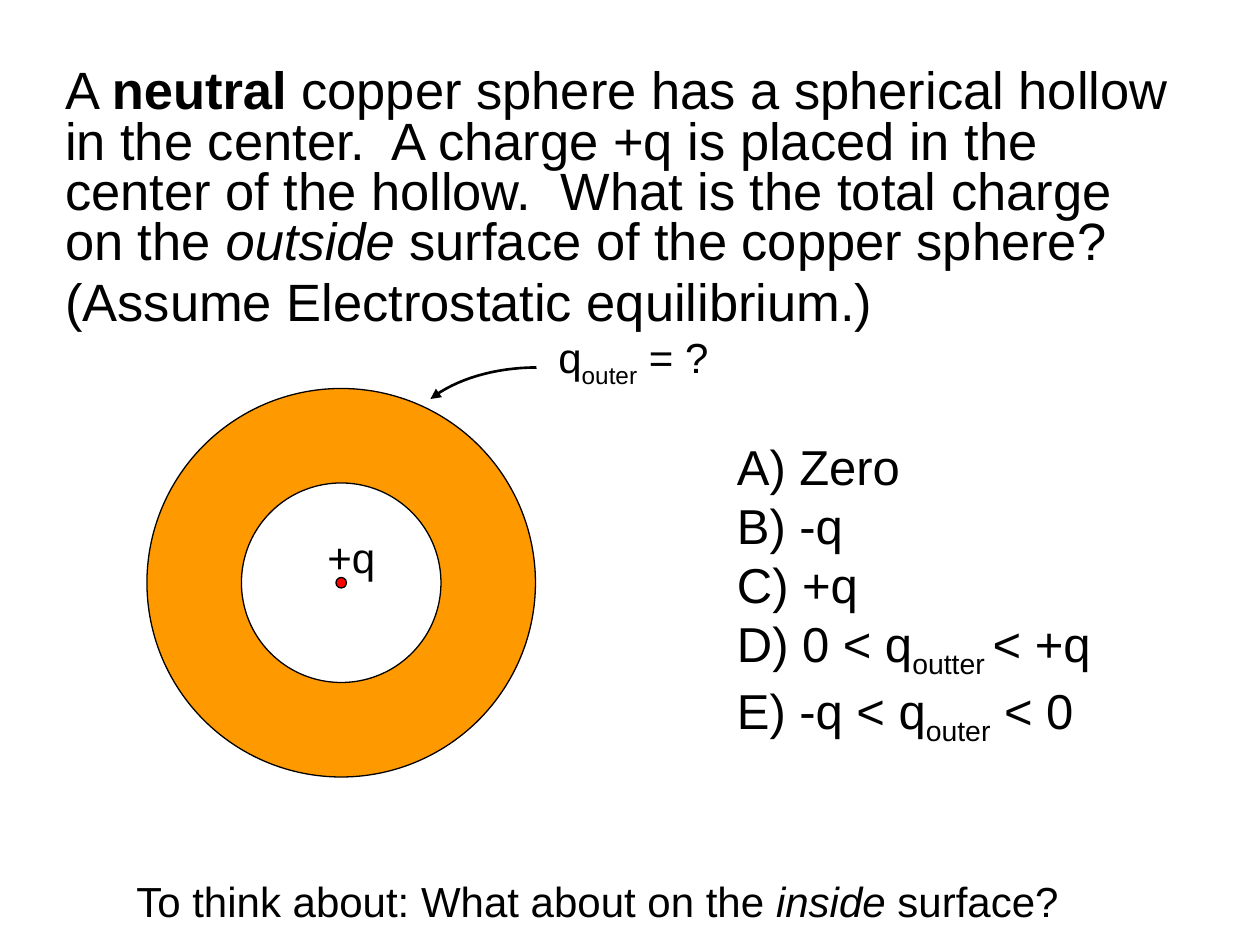
from lxml import etree
from pptx import Presentation
from pptx import util as u
from pptx.dml.color import RGBColor
from pptx.enum import shapes, text
from pptx.oxml.ns import qn

PX = 7620  # EMU per px, at 120 px to the inch
BLACK = "000000"


def color(hex_code):
    return RGBColor.from_string(hex_code)


def write(paragraph, *parts, size=24):
    """Add runs; a part is a string or a (string, style) pair: b, i or sub."""
    for part in parts:
        words, style = (part, "") if isinstance(part, str) else part
        run = paragraph.add_run()
        run.text = words
        run.font.name = "Arial"
        run.font.size = u.Pt(size)
        run.font.color.rgb = color(BLACK)
        if style == "b":
            run.font.bold = True
        elif style == "i":
            run.font.italic = True
        elif style == "sub":
            run.font._element.set("baseline", "-25000")


prs = Presentation()
prs.slide_width, prs.slide_height = 1200 * PX, 900 * PX
slide = prs.slides.add_slide(prs.slide_layouts[1])
title = slide.shapes.title
title._element.getparent().remove(title._element)

# Question
question = slide.placeholders[1]
question.left, question.top, question.width, question.height = (
    v * PX for v in (50, 60, 1080, 240))
question.text_frame.auto_size = text.MSO_AUTO_SIZE.NONE
question_paragraphs = [
    ["A ", ("neutral", "b"),
     " copper sphere has a spherical hollow in the center.  A charge +q is placed"
     " in the center of the hollow.  What is the total charge on the ",
     ("outside", "i"), " surface of the copper sphere?"],
    ["(Assume Electrostatic equilibrium.)"],
]
for n, parts in enumerate(question_paragraphs):
    paragraph = question.text_frame.paragraphs[0] if n == 0 else question.text_frame.add_paragraph()
    paragraph.line_spacing = 0.8
    paragraph.space_before = u.Pt(6)
    props = paragraph._p.get_or_add_pPr()
    props.set("marL", "0")
    props.set("indent", "0")
    etree.SubElement(props, qn("a:buNone"))
    write(paragraph, *parts, size=30)

# Sphere, hollow and charge share one centre
CENTER_X, CENTER_Y = 325, 555
for diameter, fill in ((370, "FF9900"), (190, "FFFFFF"), (10, "FF0000")):
    ball = slide.shapes.add_shape(
        shapes.MSO_SHAPE.OVAL, (CENTER_X - diameter // 2) * PX,
        (CENTER_Y - diameter // 2) * PX, diameter * PX, diameter * PX)
    ball.shadow.inherit = False
    ball.fill.solid()
    ball.fill.fore_color.rgb = color(fill)
    ball.line.color.rgb = color(BLACK)
    ball.line.width = u.Pt(0.75)

# Curved arrow to the outer surface, a cubic Bezier curve
STEPS = 16
bezier = ((511, 350), (472, 350), (434, 361), (410, 380))
curve = []
for step in range(STEPS + 1):
    t = step / STEPS
    weights = ((1 - t) ** 3, 3 * t * (1 - t) ** 2, 3 * t ** 2 * (1 - t), t ** 3)
    curve.append(tuple(sum(w * point[axis] for w, point in zip(weights, bezier)) * PX
                       for axis in (0, 1)))
builder = slide.shapes.build_freeform(*curve[0])
builder.add_line_segments(curve[1:], close=False)
arrow = builder.convert_to_shape()
arrow.shadow.inherit = False
arrow.fill.background()
arrow.line.color.rgb = color(BLACK)
arrow.line.width = u.Pt(1.5)
etree.SubElement(arrow.line._get_or_add_ln(), qn("a:tailEnd"), type="triangle")

# Labels and answers
answers = [
    [" Zero"],
    [" -q"],
    [" +q"],
    [" 0 < q", ("outter ", "sub"), "< +q"],
    [" -q < q", ("outer", "sub"), " < 0"],
]
labels = [
    ((300, 500, 70, 60), False, 24, [["+q"]]),
    ((690, 410, 412, 384), True, 28, answers),
    ((520, 310, 300, 60), True, 24, [["q", ("outer", "sub"), " = ?"]]),
    ((118, 828, 911, 60), False, 24,
     [["To think about: What about on the ", ("inside", "i"), " surface?"]]),
]
for place, wrap, size, paragraphs in labels:
    frame = slide.shapes.add_textbox(*(v * PX for v in place)).text_frame
    frame.word_wrap = wrap
    for n, parts in enumerate(paragraphs):
        paragraph = frame.paragraphs[0] if n == 0 else frame.add_paragraph()
        if paragraphs is answers:
            props = paragraph._p.get_or_add_pPr()
            props.set("marL", str(45 * PX))
            props.set("indent", str(-45 * PX))
            etree.SubElement(props, qn("a:buFont"), typeface="Arial")
            etree.SubElement(props, qn("a:buAutoNum"), type="alphaUcParenR")
        write(paragraph, *parts, size=size)

prs.save("out.pptx")
